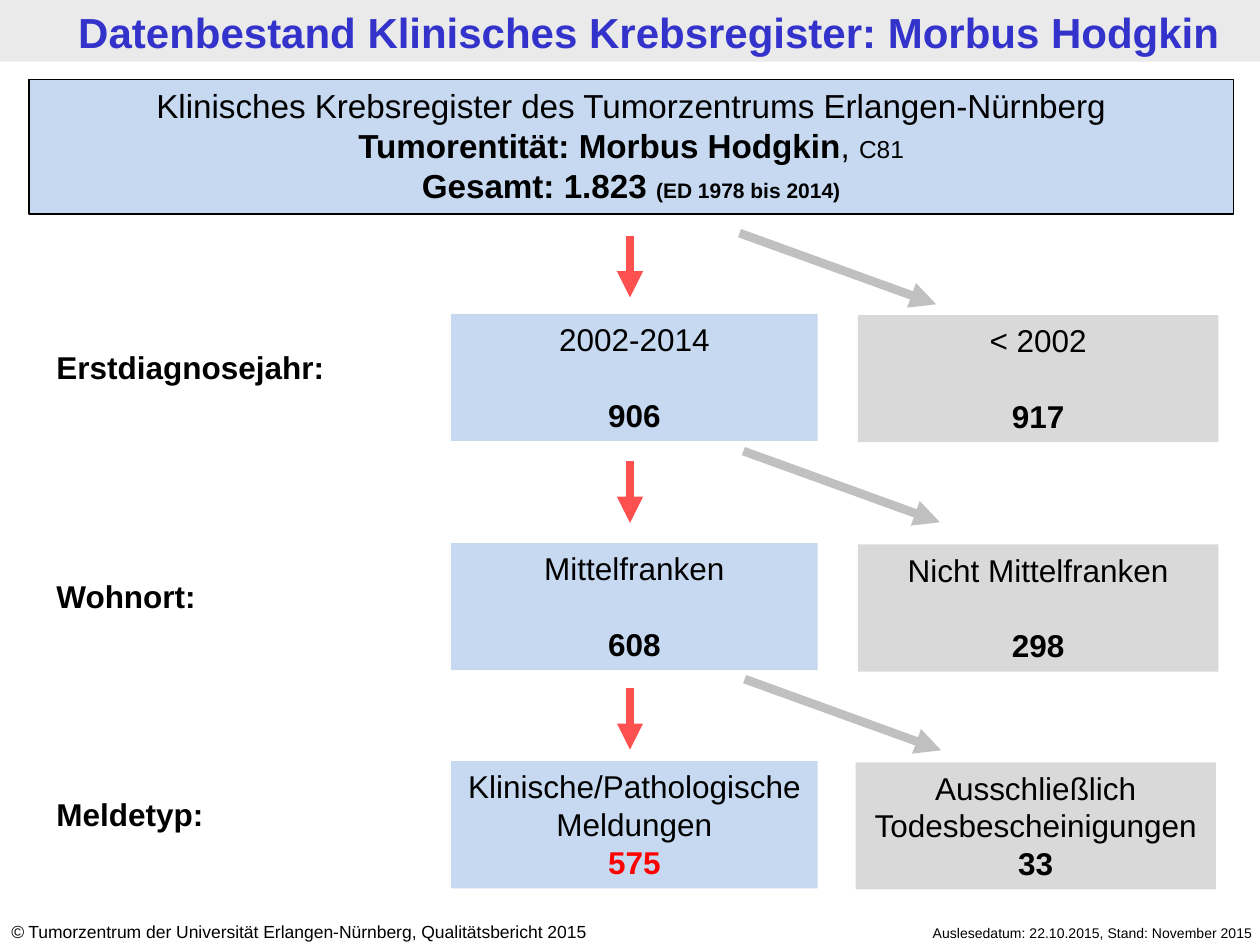
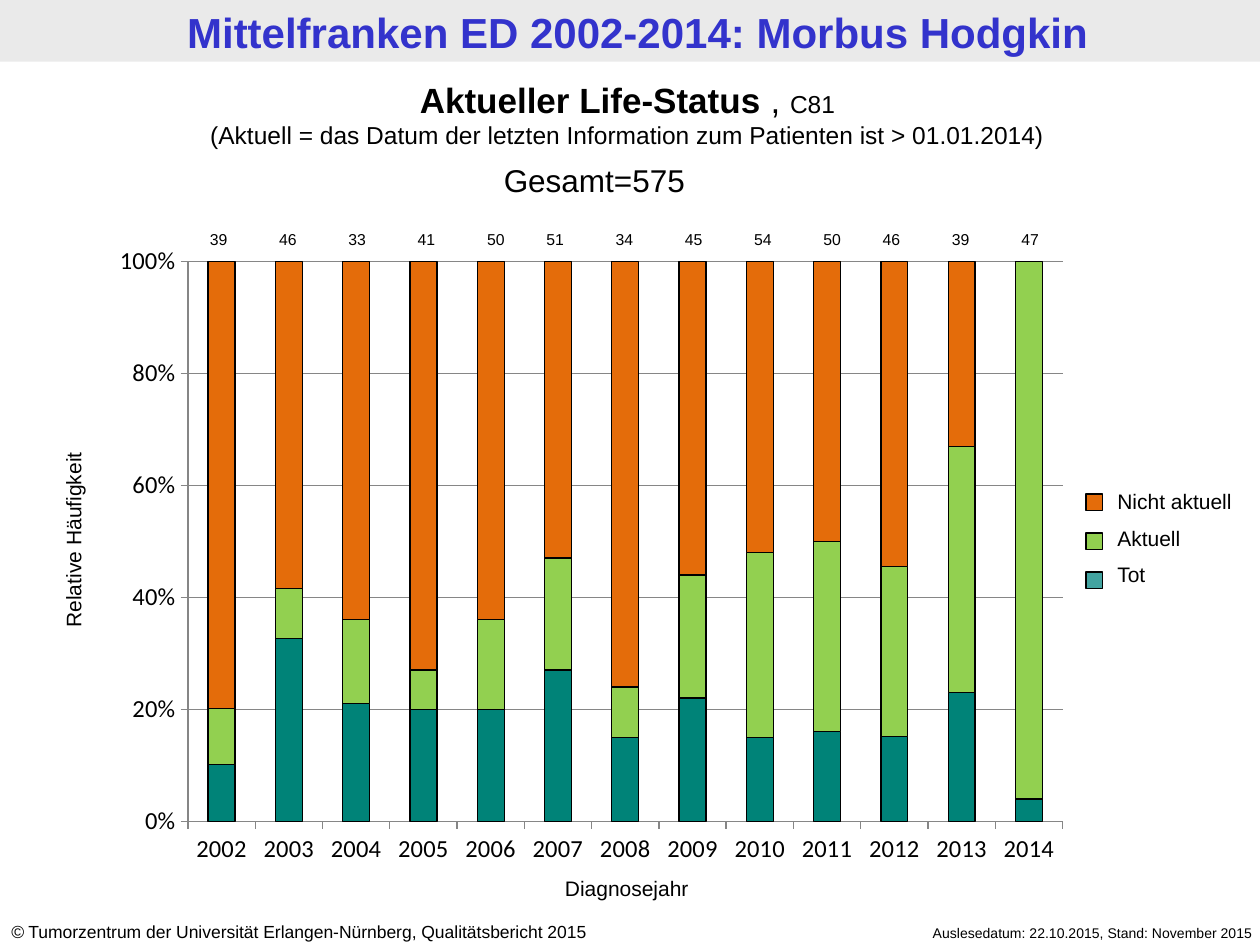
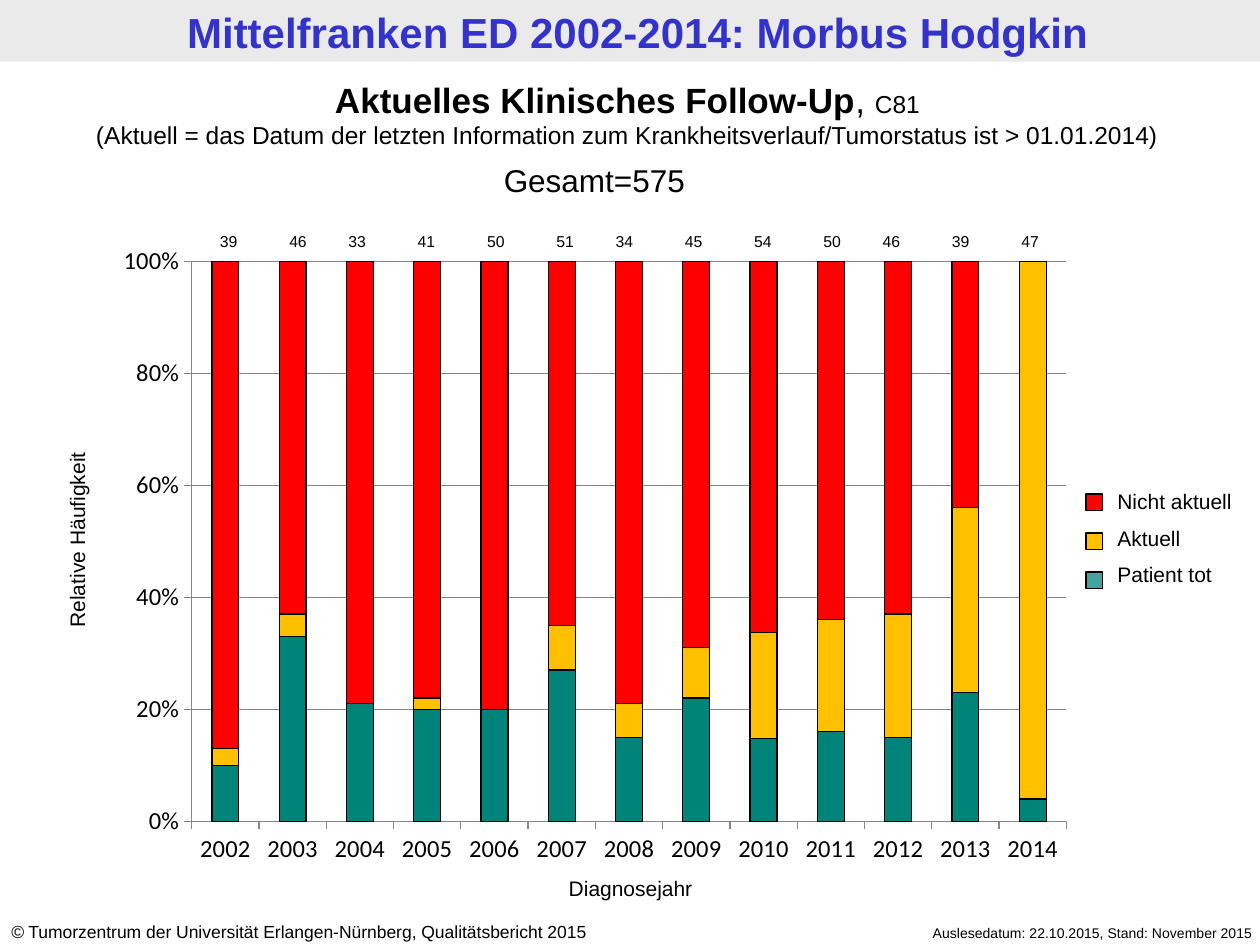
from lxml import etree
from pptx import Presentation
from pptx.chart.data import CategoryChartData
from pptx.dml.color import RGBColor
from pptx.enum.chart import XL_CHART_TYPE as CT, XL_TICK_MARK as TM
from pptx.enum.shapes import MSO_CONNECTOR as CN, MSO_SHAPE as SH
from pptx.enum.text import MSO_ANCHOR as VA, MSO_AUTO_SIZE as AS, PP_ALIGN as AL
from pptx.oxml import parse_xml
from pptx.oxml.ns import nsdecls, qn
from pptx.util import Inches, Pt

W, H = Inches(10), Inches(7.5)
COL, ROW = W / 100, H / 75
C = {
    "black": "000000", "title": "3333CC", "band": "EAEAEA", "blue": "C6D9F1",
    "gray": "D9D9D9", "red": "FF0000", "red_arrow": "FF5050",
    "gray_arrow": "C0C0C0", "axis": "868686", "teal": "008378",
    "teal_key": "008380", "green": "92D050", "orange": "E46C0A",
    "amber": "FFC000",
}
YEARS = [str(y) for y in range(2002, 2015)]
COUNTS = [39, 46, 33, 41, 50, 51, 34, 45, 54, 50, 46, 39, 47]
DEAD = [10, 33, 21, 20, 20, 27, 15, 22, 15, 16, 15, 23, 4]


def rgb(name):
    """Return a palette colour."""
    return RGBColor.from_string(C[name])


def grid(x, y, w, h):
    """Turn columns and rows into slide lengths."""
    return int(x * COL), int(y * ROW), int(w * COL), int(h * ROW)


def run(text, size, bold=False, color="black", italic=False):
    """Describe one run of text."""
    return text, size, bold, color, italic


def write(sp, paras, align=AL.CENTER, gap=0, inset=(0.1, 0.05)):
    """Fill a shape with paragraphs, each a list of runs."""
    tf = sp.text_frame
    tf.word_wrap, tf.auto_size, tf.vertical_anchor = True, AS.NONE, VA.TOP
    tf.margin_left = tf.margin_right = Inches(inset[0])
    tf.margin_top = tf.margin_bottom = Inches(inset[1])
    for i, runs in enumerate(paras):
        p = tf.add_paragraph() if i else tf.paragraphs[0]
        p.alignment = align
        p.space_before = Pt(gap if i else 0)
        for text, size, bold, color, italic in runs:
            r = p.add_run()
            r.text = text
            f = r.font
            f.name, f.size, f.bold, f.italic = "Arial", Pt(size), bold, italic
            f.color.rgb = rgb(color)


def add_text(s, box, paras, **kw):
    """Add a text box."""
    sp = s.shapes.add_textbox(*grid(*box))
    write(sp, paras, **kw)
    return sp


def add_rect(s, box, fill, line=False):
    """Add a plain rectangle, outlined on demand."""
    sp = s.shapes.add_shape(SH.RECTANGLE, *grid(*box))
    sp.shadow.inherit = False
    sp.fill.solid()
    sp.fill.fore_color.rgb = rgb(fill)
    if line:
        sp.line.color.rgb, sp.line.width = rgb("black"), Pt(0.75)
    else:
        sp.line.fill.background()
    return sp


def add_arrow(s, x, y, dx, dy, color):
    """Add a thick arrow from a start point."""
    x1, y1, w, h = grid(x, y, dx, dy)
    cx = s.shapes.add_connector(CN.STRAIGHT, x1, y1, x1 + w, y1 + h)
    cx.line.color.rgb, cx.line.width = rgb(color), Pt(5)
    etree.SubElement(cx.line._get_or_add_ln(), qn("a:tailEnd"), type="triangle")
    etree.SubElement(cx.element.spPr, qn("a:effectLst"))


def new_slide(prs, title, indent=0):
    """Start a slide with its title band and footers."""
    s = prs.slides.add_slide(prs.slide_layouts[5])
    t = s.shapes.title
    t.left, t.top, t.width, t.height = grid(0.6, 0.1, 100, 4.9)
    write(t, [[run(title, 24, True, "title")]], inset=(0.09, 0.04))
    t.text_frame.margin_left = Inches(0.09 + indent)
    t.element.addprevious(add_rect(s, (0, 0, 100, 4.9), "band").element)
    add_text(s, (66.5, 72.9, 33.9, 2.4), align=AL.RIGHT, paras=[
        [run("Auslesedatum: 22.10.2015, Stand: November 2015", 8)]])
    add_text(s, (-0.1, 72.6, 52.4, 2.7), align=AL.LEFT, paras=[
        [run("©", 10, italic=True),
         run(" Tumorzentrum der Universität Erlangen-Nürnberg, "
             "Qualitätsbericht 2015", 10)]])
    return s


def register_box(s, box):
    """Draw the box that sums up the whole register."""
    write(add_rect(s, box, "blue", True), inset=(0.11, 0.05), paras=[
        [run("Klinisches Krebsregister des Tumorzentrums Erlangen-Nürnberg", 19)],
        [run("Tumorentität: Morbus Hodgkin", 19, True), run(", ", 19),
         run("C81", 14)],
        [run("Gesamt: 1.823 ", 19, True), run("(ED 1978 bis 2014)", 12, True)]])


def flow_row(s, box, label, kept, dropped, gap, red_dy, gray_at, color="black"):
    """Draw one selection step: label, kept and dropped cases, arrows."""
    x, y, w, h = box
    add_text(s, (x, y + 2.2, 27.6, 4), [[run(label, 18, True)]], align=AL.LEFT)
    add_arrow(s, x + 46.5, y + red_dy, 0, 4.9, "red_arrow")
    add_arrow(s, x + gray_at[0], y + gray_at[1], 15.6, 5.65, "gray_arrow")
    cells = [((x + 32.3, y, 29.1, h), "blue", kept, color),
             ((x + w - 28.6, y + 0.1, 28.6, h), "gray", dropped, "black")]
    for cell, fill, (name, number), ink in cells:
        write(add_rect(s, cell, fill), gap=gap, paras=[
            [run(name, 18)], [run(number, 18, True, ink)]])


def flow_slide(prs):
    """Build the slide with the selection of cases."""
    s = new_slide(prs, "Datenbestand Klinisches Krebsregister: Morbus Hodgkin", 0.18)
    register_box(s, (2.3, 6.3, 95.6, 10.7))
    flow_row(s, (3.5, 24.9, 93.2, 10.1), "Erstdiagnosejahr:", ("2002-2014", "906"),
             ("< 2002", "917"), 21.7, -6.2, (55.2, -6.4))
    flow_row(s, (3.5, 43.1, 93.2, 10.1), "Wohnort:", ("Mittelfranken", "608"),
             ("Nicht Mittelfranken", "298"), 21.7, -6.5, (55.5, -7.3))
    flow_row(s, (3.5, 60.4, 93, 10.1), "Meldetyp:",
             ("Klinische/Pathologische Meldungen", "575"),
             ("Ausschließlich Todesbescheinigungen", "33"), 0, -5.8,
             (55.6, -6.5), "red")


def status_chart(s, box, series):
    """Draw the stacked chart and its axis captions."""
    x, y, w, h = box
    data = CategoryChartData()
    data.categories = YEARS
    for name, values, _ in series:
        data.add_series(name, values)
    ch = s.shapes.add_chart(CT.COLUMN_STACKED_100, *grid(*box), data).chart
    ch.has_legend = ch.has_title = False
    ch.font.name, ch.font.size = "Calibri", Pt(18)
    ch.font.color.rgb = rgb("black")
    plot = ch.plots[0]
    plot.gap_width, plot.overlap, plot.vary_by_categories = 150, 100, False
    for ser, (_, _, color) in zip(plot.series, series):
        ser.format.fill.solid()
        ser.format.fill.fore_color.rgb = rgb(color)
        ser.format.line.color.rgb, ser.format.line.width = rgb("black"), Pt(0.75)
    val = ch.value_axis
    val.major_unit, val.has_major_gridlines = 0.2, True
    val.tick_labels.number_format = "0%"
    val.tick_labels.number_format_is_linked = False
    for ax in (ch.category_axis, val):
        ax.major_tick_mark, ax.minor_tick_mark = TM.OUTSIDE, TM.NONE
        ax.tick_labels.font.size = Pt(14)
    for part in (ch.category_axis, val, val.major_gridlines):
        part.format.line.color.rgb = rgb("axis")
        part.format.line.width = Pt(0.75)
    area = ch.element.chart.plotArea
    for old in area.findall(qn("c:layout")):
        area.remove(old)
    share = {"x": 0.09, "y": 0.04, "w": 0.89, "h": 0.87}
    area.insert(0, parse_xml(
        f'<c:layout {nsdecls("c")}><c:manualLayout><c:layoutTarget val="inner"/>'
        '<c:xMode val="edge"/><c:yMode val="edge"/>'
        + "".join(f'<c:{k} val="{v}"/>' for k, v in share.items())
        + "</c:manualLayout></c:layout>"))
    side = add_text(s, (x - 14.1, y + 22.6, 24.1, 3.1), inset=(0.11, 0.05),
                    paras=[[run("Relative Häufigkeit", 12)]])
    side.rotation = 270
    add_text(s, (x + 30.6, y + h - 0.8, 22.5, 3.1), inset=(0.11, 0.05),
             paras=[[run("Diagnosejahr", 12)]])


def count_row(s, box, breaks):
    """Write the yearly counts, moved closer after each break."""
    x, y, w, h = box
    for i, count in enumerate(COUNTS):
        left = x + w * i - 0.8 * sum(b <= i for b in breaks)
        add_text(s, (left, y, w, h), [[run(str(count), 9)]])


def legend(s, box, series):
    """Draw the colour keys and their names, top series first."""
    x, y, w, h = box
    keys = series[::-1]
    add_text(s, (x + 1.5, y, w, h), [[run(name, 12)] for name, _, _ in keys],
             align=AL.LEFT, gap=6.5)
    for i, (_, _, color) in enumerate(keys):
        key = "teal_key" if color == "teal" else color
        sp = add_rect(s, (x, y + 0.9 + 3.1 * i, 1.3, 1.3), key, True)
        if color == "teal":
            clr = sp.fill._xPr.find(qn("a:solidFill"))[0]
            etree.SubElement(clr, qn("a:alpha"), val="74000")


def status_slide(prs, heading, comma, note, series, chart_x, counts, breaks):
    """Build a slide with one stacked status chart."""
    s = new_slide(prs, "Mittelfranken ED 2002-2014: Morbus Hodgkin")
    status_chart(s, (chart_x, 18.7, 78, 51.1), series)
    count_row(s, counts, breaks)
    legend(s, (86.2, 38.3, 12.3, 9.1), series)
    add_text(s, (-0.4, 5.7, 100.4, 6.7), [
        [run(heading, 20, True), run(comma, 20), run("C81", 14)], [run(note, 14)]])
    add_text(s, (39, 12.3, 22, 4), [[run("Gesamt=575", 18)]], align=AL.LEFT)


def main():
    """Build and save the presentation."""
    prs = Presentation()
    prs.slide_width, prs.slide_height = W, H
    flow_slide(prs)
    status_slide(
        prs, "Aktueller Life-Status ", ", ",
        "(Aktuell = das Datum der letzten Information zum Patienten ist > 01.01.2014)",
        [("Tot", DEAD, "teal"),
         ("Aktuell", [10, 9, 15, 7, 16, 20, 9, 22, 33, 34, 30, 44, 96], "green"),
         ("Nicht aktuell",
          [79, 59, 64, 73, 64, 53, 76, 56, 52, 50, 54, 33, 0], "orange")],
        7.9, (14.6, 17.7, 5.5, 2.5), (5, 10))
    status_slide(
        prs, "Aktuelles Klinisches Follow-Up", ", ",
        "(Aktuell = das Datum der letzten Information zum "
        "Krankheitsverlauf/Tumorstatus ist > 01.01.2014)",
        [("Patient tot", DEAD, "teal"),
         ("Aktuell", [3, 4, 0, 2, 0, 8, 6, 9, 19, 20, 22, 33, 96], "amber"),
         ("Nicht aktuell",
          [87, 63, 79, 78, 80, 65, 79, 69, 67, 64, 63, 44, 0], "red")],
        8.2, (15.4, 17.9, 5.5, 2.5), (2, 6, 10))
    prs.save("out.pptx")


if __name__ == "__main__":
    main()
